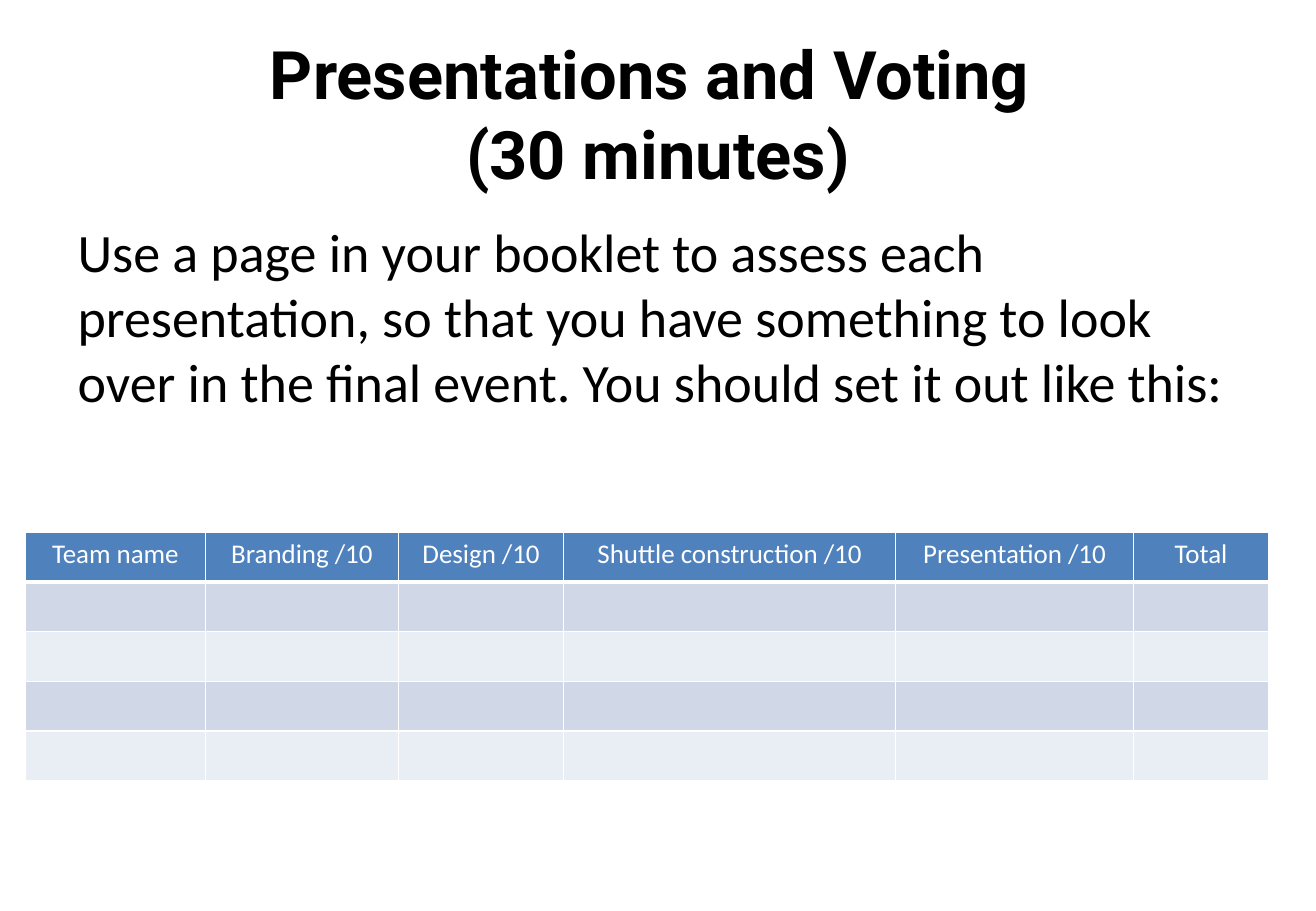
from dataclasses import dataclass

from lxml import etree
from pptx import Presentation
from pptx import util as u
from pptx.dml.color import RGBColor
from pptx.enum import text
from pptx.oxml import ns


@dataclass(frozen=True)
class Theme:
    ink: str = "000000"
    white: str = "FFFFFF"
    header: str = "4F81BD"
    bands: tuple[str, str] = ("D0D8E8", "E9EDF4")
    title_font: str = "Roboto"
    body_font: str = "Calibri"
    title_size: float = 39.6
    body_size: float = 32
    table_size: float = 16


@dataclass(frozen=True)
class Column:
    label: str
    width: float


THEME = Theme()
COLUMNS = (
    Column("Team name", 1.48),
    Column("Branding /10", 1.59),
    Column("Design /10", 1.36),
    Column("Shuttle construction /10", 2.73),
    Column("Presentation /10", 1.96),
    Column("Total", 1.11),
)
TEAM_ROWS = 4
ROW_HEIGHT = 0.41


def write(tf, content: str, *, size: float, font: str = THEME.body_font,
          color: str = THEME.ink, bold: bool = False,
          align=text.PP_ALIGN.LEFT) -> None:
    p = tf.paragraphs[0]
    p.text = content
    p.alignment = align
    for f in (p.font, *(r.font for r in p.runs)):
        f.size = u.Pt(size)
        f.name = font
        f.bold = bold
        f.color.rgb = RGBColor.from_string(color)


def add_text(slide, content: str, top: float, height: float, *,
             anchor=text.MSO_ANCHOR.TOP, **style) -> None:
    sp = slide.shapes.add_textbox(
        u.Inches(0.54), u.Inches(top), u.Inches(9.75), u.Inches(height))
    tf = sp.text_frame
    tf.word_wrap = True
    tf.vertical_anchor = anchor
    write(tf, content, **style)


def add_borders(cell, bottom: float) -> None:
    tc_pr = cell._tc.get_or_add_tcPr()
    for side, width in (("L", 1), ("R", 1), ("T", 1), ("B", bottom)):
        ln = etree.SubElement(tc_pr, ns.qn(f"a:ln{side}"), w=str(u.Pt(width)))
        fill = etree.SubElement(ln, ns.qn("a:solidFill"))
        etree.SubElement(fill, ns.qn("a:srgbClr"), val=THEME.white)


def format_cell(cell, content: str, fill: str, bottom: float = 1) -> None:
    cell.margin_left = cell.margin_right = u.Inches(0.11)
    cell.margin_top = cell.margin_bottom = u.Inches(0.05)
    write(cell.text_frame, content, size=THEME.table_size,
          color=THEME.white, align=text.PP_ALIGN.CENTER)
    add_borders(cell, bottom)
    cell.fill.solid()
    cell.fill.fore_color.rgb = RGBColor.from_string(fill)


def add_score_table(slide) -> None:
    rows = TEAM_ROWS + 1
    table = slide.shapes.add_table(
        rows, len(COLUMNS), u.Inches(0.21), u.Inches(4.38),
        u.Inches(sum(c.width for c in COLUMNS)),
        u.Inches(rows * ROW_HEIGHT)).table
    for row in table.rows:
        row.height = u.Inches(ROW_HEIGHT)
    for i, column in enumerate(COLUMNS):
        table.columns[i].width = u.Inches(column.width)
        format_cell(table.cell(0, i), column.label, THEME.header, bottom=3)
        for team in range(TEAM_ROWS):
            format_cell(table.cell(team + 1, i), "", THEME.bands[team % 2])


def main() -> None:
    prs = Presentation()
    prs.slide_width, prs.slide_height = u.Inches(10.83), u.Inches(7.5)
    slide = prs.slides.add_slide(prs.slide_layouts[6])
    add_text(slide, "Presentations and Voting \v(30 minutes)", 0.3, 1.25,
             anchor=text.MSO_ANCHOR.MIDDLE, size=THEME.title_size,
             font=THEME.title_font, bold=True, align=text.PP_ALIGN.CENTER)
    add_text(slide,
             "Use a page in your booklet to assess each presentation, so that "
             "you have something to look over in the final event. You should "
             "set it out like this:", 1.75, 4.95, size=THEME.body_size)
    add_score_table(slide)
    prs.save("out.pptx")


if __name__ == "__main__":
    main()
